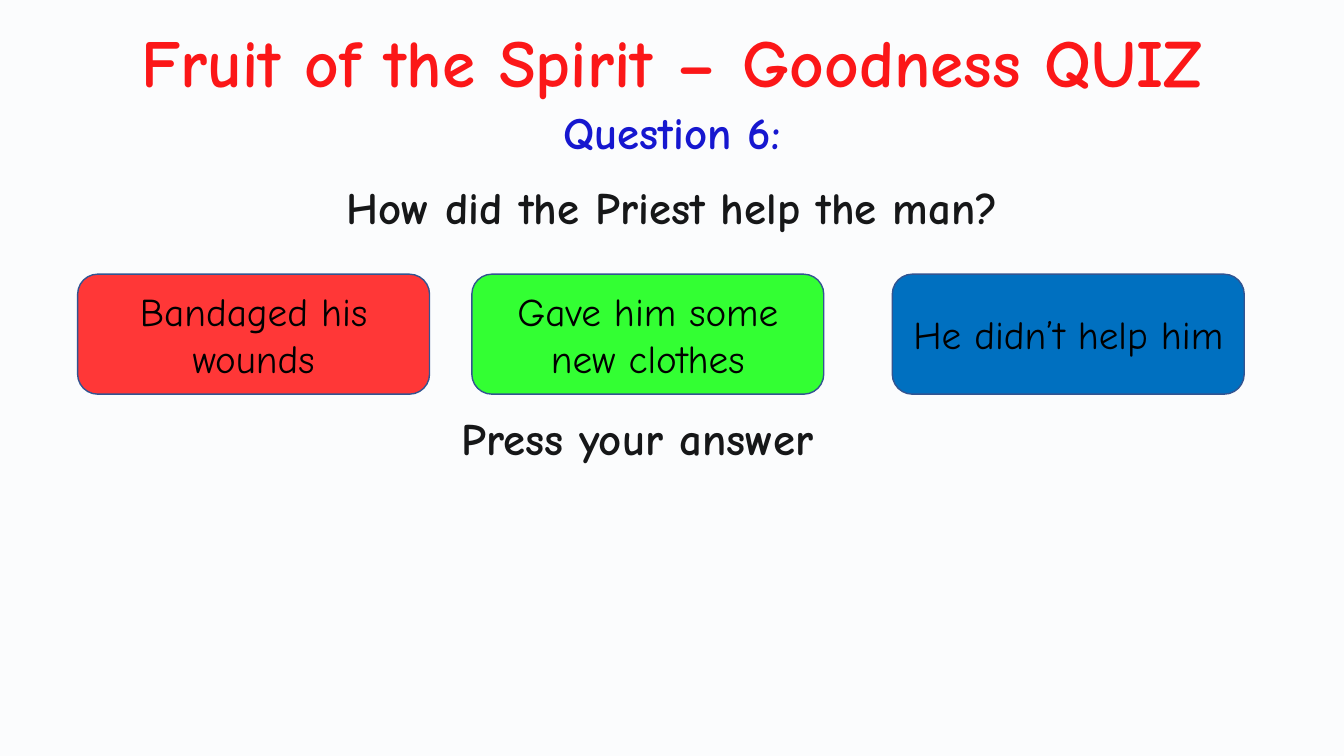
import pptx
import pptx.dml.color
import pptx.enum.shapes
import pptx.enum.text
import pptx.oxml.ns
import pptx.util
from lxml import etree

Inches = pptx.util.Inches
Pt = pptx.util.Pt
ALIGN = pptx.enum.text.PP_ALIGN
ANCHOR = pptx.enum.text.MSO_ANCHOR
SHAPES = pptx.enum.shapes.MSO_SHAPE

FONT = "Comic Neue"
WIDTH, HEIGHT = 13.33, 7.5
COLOURS = {
    "title": "FF0000",
    "number": "0000CC",
    "text": "000000",
    "tint": "DAE3F3",
    "outline": "325491",
    "red": "FF3737",
    "green": "33FF33",
    "blue": "0070C0",
}
ANSWERS = [
    (0.77, "Bandaged his wounds", "red"),
    (4.68, "Gave him some new clothes", "green"),
    (8.85, "He didn’t help him", "blue"),
]


def rgb(name):
    """Return the named colour."""
    return pptx.dml.color.RGBColor.from_string(COLOURS[name])


def write(frame, words, size, colour="text", bold=True, align=ALIGN.CENTER):
    """Put one formatted paragraph in a text frame and return it."""
    frame.word_wrap = True
    frame.text = words
    paragraph = frame.paragraphs[0]
    paragraph.alignment = align
    font = paragraph.runs[0].font
    font.name = FONT
    font.size = Pt(size)
    font.bold = bold
    font.color.rgb = rgb(colour)
    return paragraph


def add_line(slide, box, words, size, **style):
    """Add a text box in the given box and return its paragraph."""
    frame = slide.shapes.add_textbox(*map(Inches, box)).text_frame
    return write(frame, words, size, **style)


def add_block(slide, kind, box, fill):
    """Add a filled preset shape without shadow."""
    block = slide.shapes.add_shape(kind, *map(Inches, box))
    block.shadow.inherit = False
    block.fill.solid()
    block.fill.fore_color.rgb = rgb(fill)
    return block


def add_tint(slide, box):
    """Lay a faint, mostly transparent tint over the box."""
    tint = add_block(slide, SHAPES.RECTANGLE, box, "tint")
    tint.line.fill.background()
    qn = pptx.oxml.ns.qn
    colour = tint.fill._xPr.find(qn("a:solidFill")).find(qn("a:srgbClr"))
    etree.SubElement(colour, qn("a:alpha"), val="10000")


def add_heading(slide, left, top, width):
    """Add the quiz title and the question number below it."""
    add_line(slide, (left, top, width, 0.91),
             "Fruit of the Spirit – Goodness QUIZ", 48, colour="title")
    add_line(slide, (left, top + 0.84, width, 0.64),
             "Question 6:", 32, colour="number")


def add_question(slide, left, top, width):
    """Add the question and the prompt under the answers."""
    question = add_line(slide, (left, top, width, 1.19),
                        "How did the Priest help the man?", 32)
    question.line_spacing = Pt(33)
    question.space_before = Pt(10)
    prompt = add_line(slide, (left + 3.59, top + 2.28, 6.73, 0.72),
                      "Press your answer", 32, align=ALIGN.LEFT)
    prompt.line_spacing = 0.9
    prompt.space_before = Pt(7.5)


def add_answers(slide, top, width, height):
    """Add the row of answer buttons."""
    for left, words, fill in ANSWERS:
        button = add_block(slide, SHAPES.ROUNDED_RECTANGLE,
                           (left, top, width, height), fill)
        button.line.color.rgb = rgb("outline")
        button.line.width = Pt(1)
        button.text_frame.vertical_anchor = ANCHOR.MIDDLE
        write(button.text_frame, words, 28, bold=False)


def main():
    """Build the quiz slide and save it."""
    deck = pptx.Presentation()
    deck.slide_width, deck.slide_height = Inches(WIDTH), Inches(HEIGHT)
    slide = deck.slides.add_slide(deck.slide_layouts[6])
    add_heading(slide, 0.44, 0.15, 12.45)
    add_question(slide, 0.89, 1.81, 11.56)
    add_tint(slide, (0, 0, WIDTH, HEIGHT))
    add_answers(slide, 2.72, 3.49, 1.19)
    deck.save("out.pptx")


if __name__ == "__main__":
    main()
